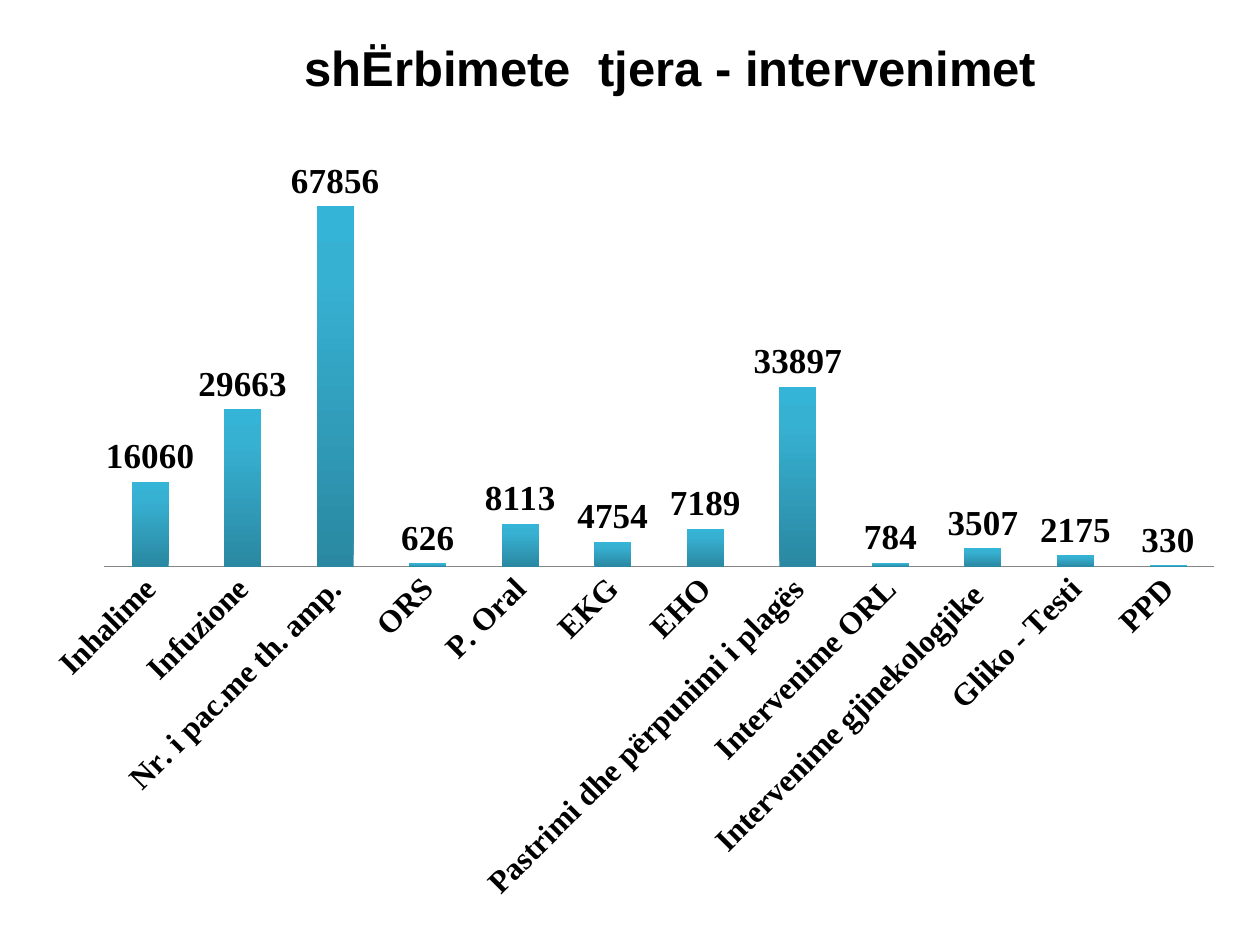
import copy
from dataclasses import dataclass

import lxml.etree
import pptx
import pptx.chart.data
import pptx.dml.color
import pptx.enum.chart
import pptx.enum.text
import pptx.oxml
import pptx.oxml.ns
import pptx.util
from pptx.util import Inches

BLACK = "000000"
AXIS_GREY = "868686"
SERIF = "Times New Roman"


@dataclass
class Service:
    name: str
    count: int


@dataclass
class GradientStop:
    position: float
    colour: str


SERVICES = [
    Service("Inhalime", 16060),
    Service("Infuzione", 29663),
    Service("Nr. i pac.me th. amp.", 67856),
    Service("ORS", 626),
    Service("P. Oral", 8113),
    Service("EKG", 4754),
    Service("EHO", 7189),
    Service("Pastrimi dhe përpunimi i plagës", 33897),
    Service("Intervenime ORL", 784),
    Service("Intervenime gjinekologjike ", 3507),
    Service("Gliko - Testi", 2175),
    Service("PPD", 330),
]
BAR_GRADIENT = [
    GradientStop(0, "2A88A2"),
    GradientStop(0.8, "37B1D2"),
    GradientStop(1, "34B4D6"),
]
# Plot area as fractions of the chart frame
PLOT_AREA = {"x": 0.06, "y": 0.02, "w": 0.92, "h": 0.54}


def rgb(colour: str) -> pptx.dml.color.RGBColor:
    return pptx.dml.color.RGBColor.from_string(colour)


def format_font(font, size: float, name: str, bold: bool = False, colour: str = BLACK) -> None:
    font.size = pptx.util.Pt(size)
    font.name = name
    font.bold = bold
    font.color.rgb = rgb(colour)


def add_text(slide, text: str, *, left, top, width, height, **font_format) -> None:
    frame = slide.shapes.add_textbox(left, top, width, height).text_frame
    frame.word_wrap = False
    frame.auto_size = pptx.enum.text.MSO_AUTO_SIZE.SHAPE_TO_FIT_TEXT
    paragraph = frame.paragraphs[0]
    paragraph.alignment = pptx.enum.text.PP_ALIGN.CENTER
    run = paragraph.add_run()
    run.text = text
    format_font(run.font, **font_format)


def fill_gradient(fill, stops: list[GradientStop], angle: float) -> None:
    fill.gradient()
    fill.gradient_angle = angle
    stop_list = fill._fill._gradFill.gsLst
    for _ in range(len(stops) - len(stop_list)):
        stop_list.append(copy.deepcopy(stop_list[-1]))
    for target, stop in zip(fill.gradient_stops, stops):
        target.position = stop.position
        target.color.rgb = rgb(stop.colour)


def place_plot_area(chart, area: dict[str, float]) -> None:
    qn = pptx.oxml.ns.qn
    plot_area = chart._chartSpace.chart.plotArea
    for old_layout in plot_area.findall(qn("c:layout")):
        plot_area.remove(old_layout)
    layout = pptx.oxml.parse_xml(f"<c:layout {pptx.oxml.ns.nsdecls('c')}/>")
    manual = lxml.etree.SubElement(layout, qn("c:manualLayout"))
    settings = {"layoutTarget": "inner", "xMode": "edge", "yMode": "edge", **area}
    for tag, value in settings.items():
        lxml.etree.SubElement(manual, qn(f"c:{tag}")).set("val", str(value))
    plot_area.insert(0, layout)


def add_services_chart(slide, services: list[Service]) -> None:
    data = pptx.chart.data.CategoryChartData()
    data.categories = [service.name for service in services]
    data.add_series("Series 1", [service.count for service in services])
    chart = slide.shapes.add_chart(
        pptx.enum.chart.XL_CHART_TYPE.COLUMN_CLUSTERED,
        Inches(0.25), Inches(1), Inches(9.58), Inches(6.25), data,
    ).chart
    chart.has_legend = False
    chart.has_title = False
    format_font(chart.font, size=10, name="Calibri")
    place_plot_area(chart, PLOT_AREA)

    # Columns
    plot = chart.plots[0]
    plot.vary_by_categories = False
    plot.gap_width = 150
    plot.overlap = -25
    fill_gradient(plot.series[0].format.fill, BAR_GRADIENT, angle=90)

    # Counts above the columns
    plot.has_data_labels = True
    counts = plot.data_labels
    counts.show_value = True
    counts.position = pptx.enum.chart.XL_LABEL_POSITION.OUTSIDE_END
    format_font(counts.font, size=20, name=SERIF, bold=True)

    # Service names, slanted under the axis
    service_axis = chart.category_axis
    service_axis.major_tick_mark = pptx.enum.chart.XL_TICK_MARK.NONE
    service_axis.format.line.color.rgb = rgb(AXIS_GREY)
    service_axis.format.line.width = pptx.util.Pt(0.75)
    format_font(service_axis.tick_labels.font, size=18, name=SERIF, bold=True)
    for body in service_axis._element.xpath("c:txPr/a:bodyPr"):
        body.set("rot", str(-45 * 60000))

    # Hidden count scale
    count_axis = chart.value_axis
    count_axis.minimum_scale = 0
    count_axis.maximum_scale = 80000
    count_axis.has_major_gridlines = False
    count_axis.visible = False


def main() -> None:
    deck = pptx.Presentation()
    deck.slide_width, deck.slide_height = Inches(10), Inches(7.5)
    slide = deck.slides.add_slide(deck.slide_layouts[6])
    add_services_chart(slide, SERVICES)
    add_text(
        slide, "shËrbimete  tjera - intervenimet",
        left=Inches(1.74), top=Inches(0.25), width=Inches(7.16), height=Inches(0.57),
        size=28, name="Arial", bold=True,
    )
    deck.save("out.pptx")


if __name__ == "__main__":
    main()
